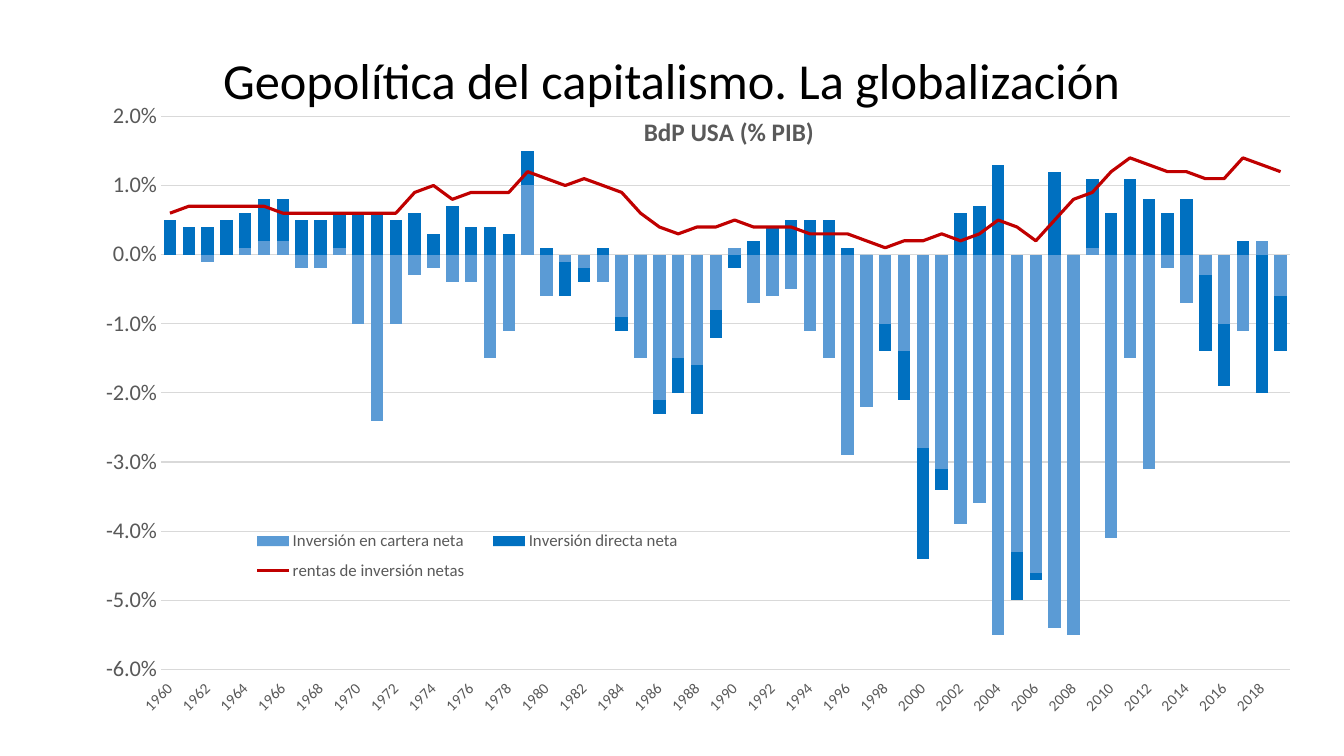
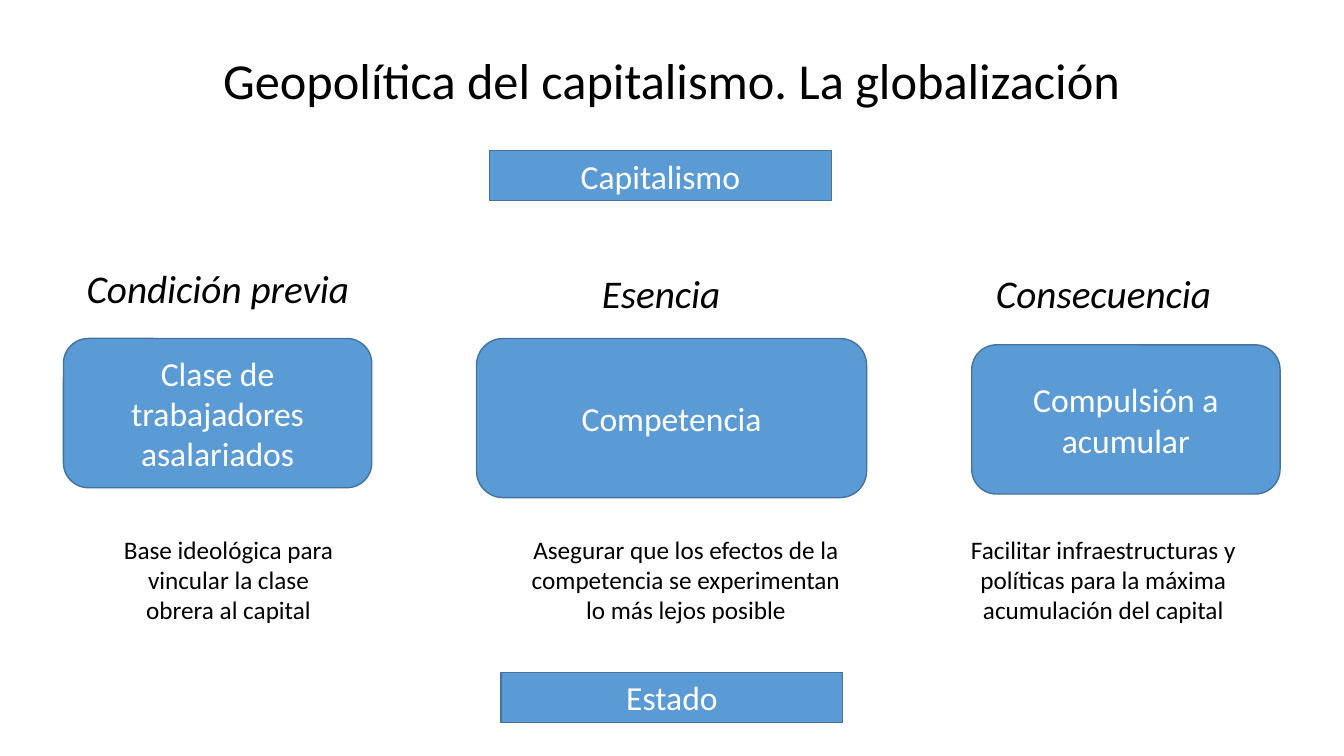
from collections import namedtuple

from lxml import etree
from pptx import Presentation
from pptx.chart.data import CategoryChartData
from pptx.dml.color import RGBColor
from pptx.enum.chart import XL_CHART_TYPE, XL_LEGEND_POSITION, XL_MARKER_STYLE, XL_TICK_LABEL_POSITION, XL_TICK_MARK
from pptx.enum.shapes import MSO_SHAPE
from pptx.enum.text import MSO_ANCHOR, MSO_AUTO_SIZE, PP_ALIGN
from pptx.oxml.ns import qn
from pptx.util import Cm, Pt

STACKED = XL_CHART_TYPE.COLUMN_STACKED
BOTTOM = XL_LEGEND_POSITION.BOTTOM
NO_MARKER = XL_MARKER_STYLE.NONE
LOW = XL_TICK_LABEL_POSITION.LOW
NO_TICK = XL_TICK_MARK.NONE
RECTANGLE = MSO_SHAPE.RECTANGLE
ROUNDED = MSO_SHAPE.ROUNDED_RECTANGLE
TOP, MIDDLE = MSO_ANCHOR.TOP, MSO_ANCHOR.MIDDLE
NO_AUTOFIT = MSO_AUTO_SIZE.NONE
CENTER = PP_ALIGN.CENTER

FONT = "Calibri"
BLACK, WHITE, GREY, RULE = "000000", "FFFFFF", "595959", "D9D9D9"
BLUE, EDGE, DEEP_BLUE, RED = "5B9BD5", "43739E", "0070C0", "C00000"
TITLE = "Geopolítica del capitalismo. La globalización"

Box = namedtuple("Box", "left top width height")
Column = namedtuple("Column", "box heading heading_dy block block_box note note_box")

TITLE_BOX = Box(5.3, 1.1, 23.26, 1.8)
CHART_BOX = Box(1.88, 2.59, 30.94, 15.52)
HEADING_HEIGHT = 1.45

COLUMNS = [
    Column(Box(0.69, 6.53, 9.6, 9.38), "Condición previa", 0,
           "Clase de trabajadores asalariados", Box(0.91, 2, 7.77, 3.76),
           "Base ideológica para vincular la clase obrera al capital", Box(1.88, 6.81, 6.38, 2.57)),
    Column(Box(11.86, 6.53, 9.6, 9.38), "Esencia", 0.12,
           "Competencia", Box(0.15, 2, 9.83, 4.01),
           "Asegurar que los efectos de la competencia se experimentan lo más lejos posible",
           Box(1.27, 6.81, 8.31, 2.57)),
    Column(Box(23.01, 6.53, 9.6, 9.38), "Consecuencia", 0.12,
           "Compulsión a acumular", Box(1.48, 2.16, 7.77, 3.76),
           "Facilitar infraestructuras y políticas para la máxima acumulación del capital",
           Box(0.64, 6.81, 8.31, 2.57)),
]

YEARS = range(1960, 2020)
PER_MILLE = {
    "Inversión en cartera neta": [
        0, 0, -1, 0, 1, 2, 2, -2, -2, 1, -10, -24, -10, -3, -2, -4, -4, -15, -11, 10,
        -6, -1, -2, -4, -9, -15, -21, -15, -16, -8, 1, -7, -6, -5, -11, -15, -29, -22, -10, -14,
        -28, -31, -39, -36, -55, -43, -46, -54, -55, 1, -41, -15, -31, -2, -7, -3, -10, -11, 2, -6],
    "Inversión directa neta": [
        5, 4, 4, 5, 5, 6, 6, 5, 5, 5, 6, 6, 5, 6, 3, 7, 4, 4, 3, 5,
        1, -5, -2, 1, -2, 0, -2, -5, -7, -4, -2, 2, 4, 5, 5, 5, 1, 0, -4, -7,
        -16, -3, 6, 7, 13, -7, -1, 12, 0, 10, 6, 11, 8, 6, 8, -11, -9, 2, -20, -8],
    "rentas de inversión netas": [
        6, 7, 7, 7, 7, 7, 6, 6, 6, 6, 6, 6, 6, 9, 10, 8, 9, 9, 9, 12,
        11, 10, 11, 10, 9, 6, 4, 3, 4, 4, 5, 4, 4, 4, 3, 3, 3, 2, 1, 2,
        2, 3, 2, 3, 5, 4, 2, 5, 8, 9, 12, 14, 13, 12, 12, 11, 11, 14, 13, 12],
}


def color(value):
    return RGBColor.from_string(value)


def lengths(box):
    return [Cm(value) for value in box]


def inside(outer, inner):
    return Box(outer.left + inner.left, outer.top + inner.top, inner.width, inner.height)


def style_font(font, size, tint, bold=False, italic=False):
    font.name, font.size, font.bold, font.italic = FONT, Pt(size), bold, italic
    font.color.rgb = color(tint)


def write(frame, text, size, tint, anchor=TOP, italic=False):
    frame.word_wrap = True
    frame.auto_size = NO_AUTOFIT
    frame.vertical_anchor = anchor
    para = frame.paragraphs[0]
    para.alignment = CENTER
    span = para.add_run()
    span.text = text
    style_font(span.font, size, tint, italic=italic)


def add_titled_page(deck):
    page = deck.slides.add_slide(deck.slide_layouts[5])
    title = page.shapes.title
    title.left, title.top, title.width, title.height = lengths(TITLE_BOX)
    write(title.text_frame, TITLE, 36, BLACK)
    return page


def add_label(page, box, text, size, italic=False):
    label = page.shapes.add_textbox(*lengths(box))
    write(label.text_frame, text, size, BLACK, italic=italic)


def add_block(page, box, text, preset):
    block = page.shapes.add_shape(preset, *lengths(box))
    block.shadow.inherit = False
    block.fill.solid()
    block.fill.fore_color.rgb = color(BLUE)
    block.line.color.rgb = color(EDGE)
    block.line.width = Pt(1)
    write(block.text_frame, text, 24, WHITE, MIDDLE)


def add_element(parent, tag, value):
    child = etree.SubElement(parent, qn(tag))
    child.set("val", str(value))
    return child


def remove_children(parent, tag):
    for child in parent.findall(qn(tag)):
        parent.remove(child)


def set_layout(owner, index, box, inner=False):
    remove_children(owner, "c:layout")
    layout = etree.Element(qn("c:layout"))
    manual = etree.SubElement(layout, qn("c:manualLayout"))
    if inner:
        add_element(manual, "c:layoutTarget", "inner")
    for side in "xy":
        add_element(manual, f"c:{side}Mode", "edge")
    for side, value in zip("xywh", box):
        if value is not None:
            add_element(manual, f"c:{side}", value)
    owner.insert(index, layout)


def move_last_series_to_line(chart):
    columns = chart.plots[0]._element
    series = columns.findall(qn("c:ser"))[-1]
    remove_children(series, "c:invertIfNegative")
    line_plot = etree.Element(qn("c:lineChart"))
    line_plot = columns.makeelement(line_plot.tag)
    columns.addnext(line_plot)
    add_element(line_plot, "c:grouping", "standard")
    add_element(line_plot, "c:varyColors", 0)
    line_plot.append(series)
    add_element(line_plot, "c:marker", 1)
    for axis in columns.findall(qn("c:axId")):
        add_element(line_plot, "c:axId", axis.get("val"))


def style_series(chart):
    columns, lines = chart.plots
    columns.vary_by_categories = False
    columns.gap_width, columns.overlap = 51, 100
    for series, tint in zip(columns.series, (BLUE, DEEP_BLUE)):
        series.invert_if_negative = False
        series.format.fill.solid()
        series.format.fill.fore_color.rgb = color(tint)
    income = lines.series[0]
    income.smooth = False
    income.marker.style = NO_MARKER
    income.format.line.color.rgb = color(RED)
    income.format.line.width = Pt(2.25)


def style_axes(chart):
    years, shares = chart.category_axis, chart.value_axis
    for axis, size in ((years, 11), (shares, 16)):
        axis.major_tick_mark = axis.minor_tick_mark = NO_TICK
        style_font(axis.tick_labels.font, size, GREY)
    years.tick_label_position = LOW
    years._element.find(qn("c:txPr")).find(qn("a:bodyPr")).set("rot", "-2700000")
    skip = years._element.makeelement(qn("c:tickLblSkip"), {"val": "2"})
    years._element.find(qn("c:noMultiLvlLbl")).addprevious(skip)
    shares.minimum_scale, shares.maximum_scale, shares.major_unit = -0.06, 0.02, 0.01
    shares.tick_labels.number_format = "0.0%"
    shares.tick_labels.number_format_is_linked = False
    shares.format.line.fill.background()
    shares.has_major_gridlines = True
    for line in (years.format.line, shares.major_gridlines.format.line):
        line.color.rgb = color(RULE)
        line.width = Pt(0.75)


def style_captions(chart):
    chart.has_title = True
    title = chart.chart_title
    span = title.text_frame.paragraphs[0].add_run()
    span.text = "BdP USA (% PIB)"
    style_font(span.font, 18, GREY, bold=True)
    chart.has_legend = True
    chart.legend.position = BOTTOM
    chart.legend.include_in_layout = True
    style_font(chart.legend.font, 12, GREY)
    set_layout(title._element, 1, Box(0.46, 0.01, None, None))
    set_layout(chart.legend._element, 1, Box(0.13, 0.68, 0.38, 0.11))


def add_balance_chart(page, box):
    data = CategoryChartData(number_format="0.0%")
    data.categories = [str(year) for year in YEARS]
    for name, values in PER_MILLE.items():
        data.add_series(name, [value / 1000 for value in values])
    chart = page.shapes.add_chart(STACKED, *lengths(box), data).chart
    style_font(chart.font, 10, BLACK)
    move_last_series_to_line(chart)
    style_series(chart)
    style_axes(chart)
    style_captions(chart)
    plot_area = chart.plots[0]._element.getparent()
    set_layout(plot_area, 0, Box(0.07, 0.02, 0.92, 0.9), inner=True)


def add_column(page, column):
    heading_box = Box(0, column.heading_dy, column.box.width, HEADING_HEIGHT)
    add_label(page, inside(column.box, heading_box), column.heading, 28, italic=True)
    add_block(page, inside(column.box, column.block_box), column.block, ROUNDED)
    add_label(page, inside(column.box, column.note_box), column.note, 18)


def build_chart_page(deck):
    add_balance_chart(add_titled_page(deck), CHART_BOX)


def build_scheme_page(deck):
    page = add_titled_page(deck)
    add_block(page, Box(12.34, 3.79, 8.61, 1.27), "Capitalismo", RECTANGLE)
    for column in COLUMNS:
        add_column(page, column)
    add_block(page, Box(12.63, 16.94, 8.61, 1.27), "Estado", RECTANGLE)


def main():
    deck = Presentation()
    deck.slide_width, deck.slide_height = Cm(33.87), Cm(19.05)
    build_chart_page(deck)
    build_scheme_page(deck)
    deck.save("out.pptx")


if __name__ == "__main__":
    main()
